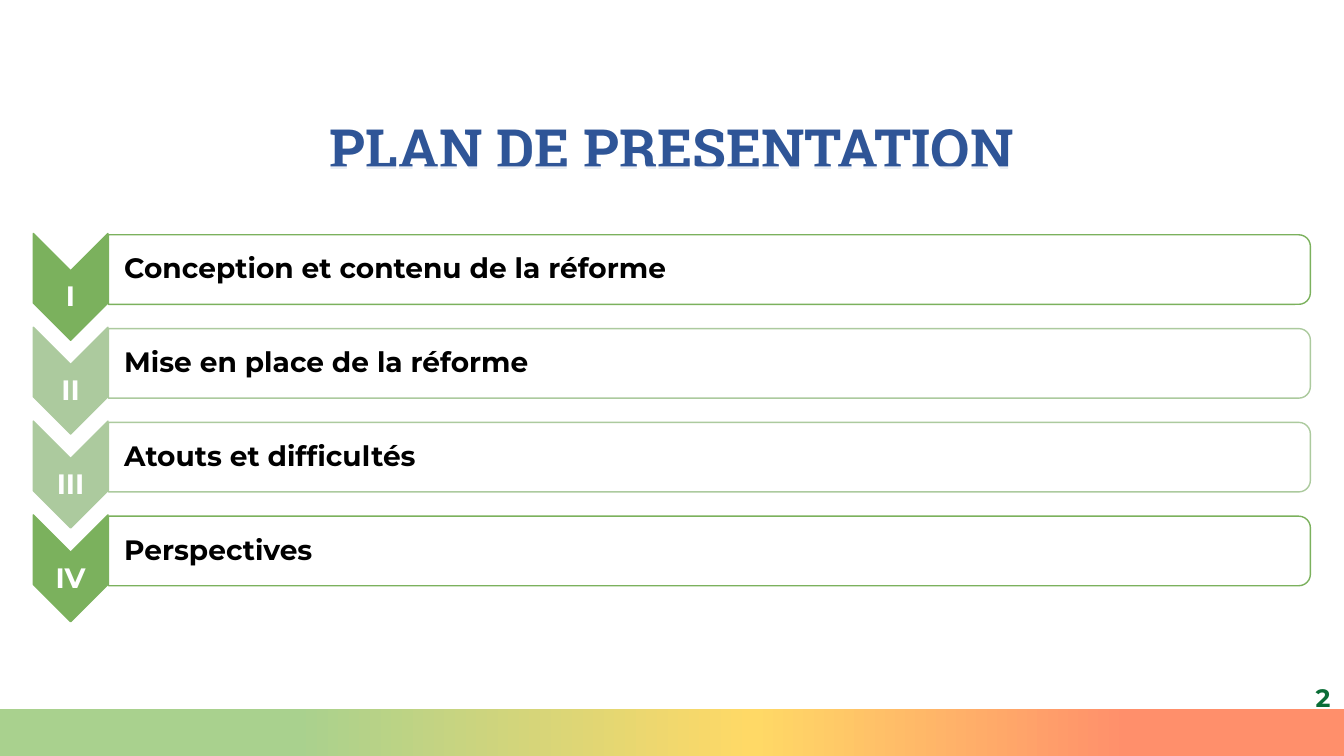
from copy import deepcopy

from lxml.etree import SubElement
from pptx import Presentation
from pptx.dml.color import RGBColor
from pptx.enum.shapes import MSO_SHAPE
from pptx.enum.text import MSO_ANCHOR, PP_ALIGN
from pptx.oxml.ns import qn
from pptx.util import Pt

COLORS = {
    "white": "FFFFFF", "black": "000000", "title": "2F5597", "number": "0A6D36",
    "green": "7BB15D", "pale": "ACCA9E",
    "leaf": "A9D18E", "gold": "FFD966", "coral": "FF8F6B",
}


def rgb(name):
    return RGBColor.from_string(COLORS[name])


class Deck:
    font = "Montserrat"

    def __init__(self, prs):
        self.s = prs.slides.add_slide(prs.slide_layouts[6])

    def shape(self, kind, x, y, w, h, fill=None, line=None, rotation=0, alpha=None):
        sp = self.s.shapes.add_shape(kind, Pt(x), Pt(y), Pt(w), Pt(h))
        sp.shadow.inherit = False
        sp.rotation = rotation
        if fill:
            sp.fill.solid()
            sp.fill.fore_color.rgb = rgb(fill)
        if alpha:
            clr = sp._element.spPr.find(qn("a:solidFill"))[0]
            SubElement(clr, qn("a:alpha"), val=str(alpha * 1000))
        if line:
            sp.line.color.rgb = rgb(line)
            sp.line.width = Pt(1)
        else:
            sp.line.fill.background()
        return sp

    def turned(self, kind, x, y, w, h, **style):
        """Shape turned by 90 degrees that covers the given area."""
        return self.shape(kind, x + (w - h) / 2, y + (h - w) / 2, h, w,
                          rotation=90, **style)

    def gradient(self, x, y, w, h, stops):
        sp = self.shape(MSO_SHAPE.RECTANGLE, x, y, w, h)
        sp.fill.gradient()
        sp.fill.gradient_angle = 0
        gs_list = sp._element.spPr.find(qn("a:gradFill")).find(qn("a:gsLst"))
        while len(gs_list) < len(stops):
            gs_list.append(deepcopy(gs_list[-1]))
        for stop, (position, color) in zip(sp.fill.gradient_stops, stops):
            stop.position = position
            stop.color.rgb = rgb(color)

    def text(self, words, x, y, w, h, size, color, font=None,
             align=PP_ALIGN.CENTER, spacing=1.0, insets=(7.2, 3.6, 7.2, 3.6)):
        tf = self.s.shapes.add_textbox(Pt(x), Pt(y), Pt(w), Pt(h)).text_frame
        tf.word_wrap = True
        tf.vertical_anchor = MSO_ANCHOR.MIDDLE
        tf.margin_left, tf.margin_top, tf.margin_right, tf.margin_bottom = map(Pt, insets)
        p = tf.paragraphs[0]
        p.alignment = align
        p.line_spacing = spacing
        r = p.add_run()
        r.text = words
        r.font.name = font or self.font
        r.font.size = Pt(size)
        r.font.bold = True
        r.font.color.rgb = rgb(color)

    def step(self, y, numeral, words, color):
        self.turned(MSO_SHAPE.CHEVRON, 23.8, y, 53.3, 76.3, fill=color, line=color)
        self.text(numeral, 23.8, y + 26.7, 53.3, 23, 20, "white",
                  spacing=1.5, insets=(0.9,) * 4)
        self.turned(MSO_SHAPE.ROUND_2_SAME_RECTANGLE, 77.5, y + 0.9, 858.5, 49.7,
                    fill="white", line=color, alpha=90)
        self.text(words, 77.5, y + 3.5, 856, 44.6, 20, "black", align=PP_ALIGN.LEFT,
                  spacing=0.9, insets=(11.2, 0.9, 0.9, 0.9))


def main():
    prs = Presentation()
    prs.slide_width, prs.slide_height = Pt(960), Pt(540)
    deck = Deck(prs)

    # Footer band
    deck.gradient(0, 506.4, 960, 33.6, [(0.22, "leaf"), (0.56, "gold"), (0.84, "coral")])

    # Title, with a white strip over its lower edge
    deck.text("PLAN DE PRESENTATION", 66, 82, 828, 52, 39.6, "title",
              font="Roboto Slab", spacing=0.9)
    deck.turned(MSO_SHAPE.ROUND_2_SAME_RECTANGLE, 77.5, 118.8, 858.5, 11.5,
                fill="white", alpha=90)

    # Agenda steps
    steps = [
        ("I", "Conception et contenu de la réforme", "green"),
        ("II", "Mise en place de la réforme", "pale"),
        ("III", "Atouts et difficultés", "pale"),
        ("IV", "Perspectives", "green"),
    ]
    for i, (numeral, words, color) in enumerate(steps):
        deck.step(166.8 + 67 * i, numeral, words, color)

    # Slide number
    deck.text("2", 924.5, 486, 41, 24, 18, "number")

    prs.save("out.pptx")


if __name__ == "__main__":
    main()
